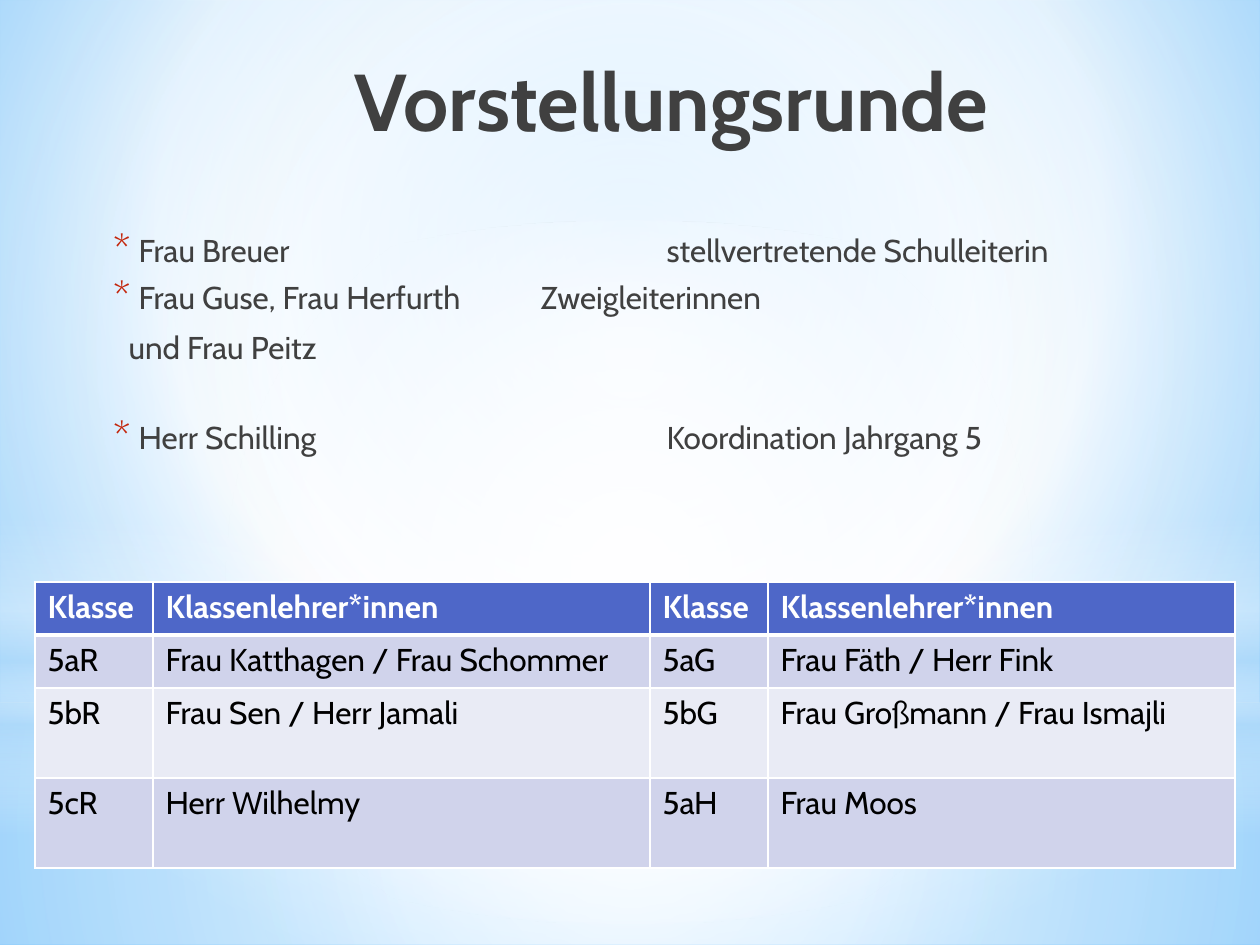
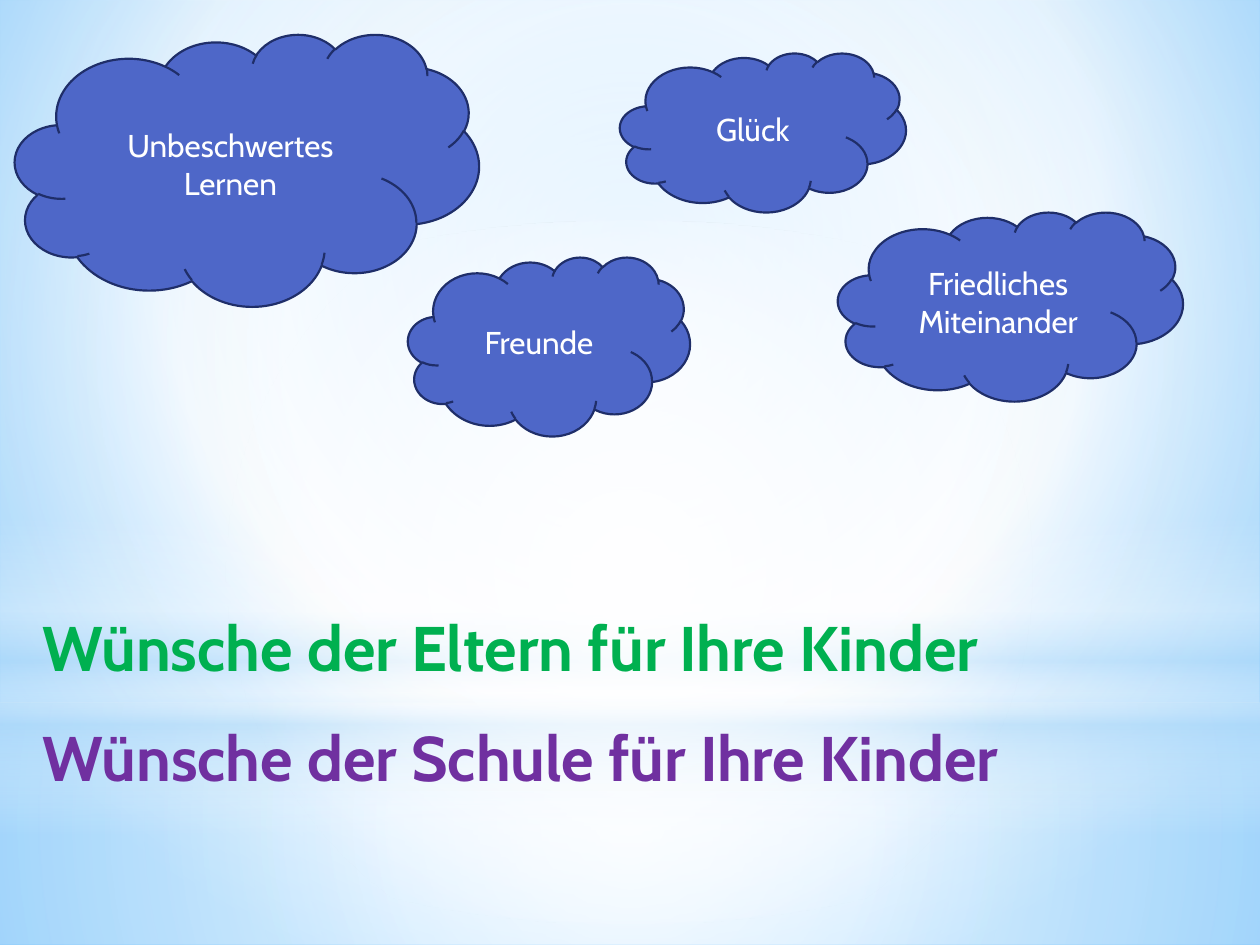
import pptx
import pptx.dml.color
import pptx.enum.shapes
import pptx.enum.text
import pptx.oxml
import pptx.oxml.ns
import pptx.util

RGB = pptx.dml.color.RGBColor
Pt = pptx.util.Pt
SHAPE = pptx.enum.shapes.MSO_SHAPE
ALIGN = pptx.enum.text.PP_ALIGN
ANCHOR = pptx.enum.text.MSO_ANCHOR

WHITE = RGB(0xFF, 0xFF, 0xFF)
BLACK = RGB(0x00, 0x00, 0x00)
GREY = RGB(0x40, 0x40, 0x40)
RED = RGB(0xC3, 0x26, 0x0C)
BLUE = RGB(0x4E, 0x67, 0xC8)
NAVY = RGB(0x1F, 0x2E, 0x69)
GREEN = RGB(0x00, 0xB0, 0x50)
PURPLE = RGB(0x70, 0x30, 0xA0)
BAND_DARK = RGB(0xD0, 0xD3, 0xEB)
BAND_LIGHT = RGB(0xE9, 0xEB, 0xF5)
SKY = RGB(0x9E, 0xD5, 0xFF)
DEEP_SKY = RGB(0x5B, 0xB9, 0xFF)
HAZE = RGB(0xB4, 0xDC, 0xFA)

FONT = "Cabin"
CENTRE = (50, 50, 50, 50)


def px(length):
    return round(length * 914400 / 126)


def xml(markup):
    """Parse one DrawingML element written without its namespace."""
    tag, rest = markup[1:].split(" ", 1)
    return pptx.oxml.parse_xml(f"<{tag} {pptx.oxml.ns.nsdecls('a')} {rest}")


def gradient(stops, focus=None):
    """Circular gradient around focus, or a vertical one without it."""
    marks = "".join(
        f'<a:gs pos="{place * 1000}"><a:srgbClr val="{colour}">'
        f'<a:alpha val="{opacity * 1000}"/></a:srgbClr></a:gs>'
        for place, colour, opacity in stops)
    if focus:
        sides = " ".join(f'{side}="{share * 1000}"' for side, share in zip("ltrb", focus))
        course = f'<a:path path="circle"><a:fillToRect {sides}/></a:path>'
    else:
        course = '<a:lin ang="5400000" scaled="0"/>'
    return xml(f'<a:gradFill rotWithShape="1"><a:gsLst>{marks}</a:gsLst>{course}</a:gradFill>')


class Slides:
    def __init__(self):
        self.deck = pptx.Presentation()
        self.deck.slide_width, self.deck.slide_height = px(1260), px(945)
        self.page = None

    def add_page(self, layout):
        self.page = self.deck.slides.add_slide(self.deck.slide_layouts[layout])

    def place(self, shape, area):
        shape.left, shape.top, shape.width, shape.height = map(px, area)

    def style(self, para, size, colour, bold=False, align=ALIGN.LEFT):
        para.alignment = align
        font = para.font
        font.name, font.size, font.bold = FONT, Pt(size), bold
        font.color.rgb = colour

    def put_gradient(self, holder, fill):
        """Swap the solid fill of holder for a gradient."""
        solid = holder.find(pptx.oxml.ns.qn("a:solidFill"))
        holder.replace(solid, fill)

    def backdrop(self, stops, focus, layers):
        """Give the master its background and its layers of light."""
        master = self.deck.slide_master
        master.background.fill.solid()
        self.put_gradient(master.element.xpath("p:cSld/p:bg/p:bgPr")[0], gradient(stops, focus))
        for index, (kind, area, layer_stops, layer_focus) in enumerate(layers):
            layer = self.page.shapes.add_shape(kind, *map(px, area))
            layer.shadow.inherit = False
            layer.line.fill.background()
            layer.fill.solid()
            self.put_gradient(layer.element.spPr, gradient(layer_stops, layer_focus))
            layer.element.xpath("p:nvSpPr/p:cNvPr")[0].set("id", str(20 + index))
            master.shapes.element.insert(2 + index, layer.element)

    def heading(self, box, text, area, size, colour, align=ALIGN.LEFT):
        self.place(box, area)
        frame = box.text_frame
        frame.word_wrap = True
        frame.auto_size = pptx.enum.text.MSO_AUTO_SIZE.NONE
        frame.vertical_anchor = ANCHOR.TOP
        frame.text = text
        self.style(frame.paragraphs[0], size, colour, True, align)

    def title(self, *details):
        self.heading(self.page.shapes.title, *details)

    def text_line(self, text, area, *details):
        box = self.page.shapes.add_textbox(*map(px, area))
        self.heading(box, text, area, *details)

    def people(self, rows, area):
        """List of (text, bulleted, tab, space before, space after)."""
        box = self.page.placeholders[1]
        self.place(box, area)
        frame = box.text_frame
        frame.auto_size = pptx.enum.text.MSO_AUTO_SIZE.NONE
        frame.vertical_anchor = ANCHOR.TOP
        frame.text = "\n".join(row[0] for row in rows)
        for para, (_, bulleted, tab, before, after) in zip(frame.paragraphs, rows):
            props = para._p.get_or_add_pPr()
            props.set("marL", str(px(32 if bulleted else 22)))
            props.set("indent", str(px(-25 if bulleted else 0)))
            para.space_before, para.space_after = Pt(before), Pt(after)
            if bulleted:
                props.append(xml(f'<a:buClr ><a:srgbClr val="{RED}"/></a:buClr>'))
                props.append(xml('<a:buSzPct val="130000"/>'))
                props.append(xml(f'<a:buFont typeface="{FONT}"/>'))
                props.append(xml('<a:buChar char="*"/>'))
            else:
                props.append(xml("<a:buNone />"))
            if tab:
                props.append(xml(f'<a:tabLst ><a:tab pos="{px(tab)}" algn="l"/></a:tabLst>'))
            self.style(para, 18, GREY)

    def table(self, rows, left, top, widths, heights):
        grid = self.page.shapes.add_table(
            len(rows), len(widths), px(left), px(top), px(sum(widths)), px(sum(heights))).table
        grid.horz_banding = False
        for column, width in zip(grid.columns, widths):
            column.width = px(width)
        for index, (row, height) in enumerate(zip(rows, heights)):
            grid.rows[index].height = px(height)
            header = index == 0
            for cell, text in zip(grid.rows[index].cells, row):
                cell.text = text
                self.style(cell.text_frame.paragraphs[0], 18, WHITE if header else BLACK, header)
                cell.fill.solid()
                cell.fill.fore_color.rgb = (
                    BLUE if header else BAND_DARK if index % 2 else BAND_LIGHT)
                self.cell_borders(cell, 3 if index == 1 else 1, 3 if header else 1)

    def cell_borders(self, cell, top, bottom):
        props = cell._tc.get_or_add_tcPr()
        for index, (side, width) in enumerate(zip("LRTB", (1, 1, top, bottom))):
            props.insert(index, xml(
                f'<a:ln{side} w="{Pt(width)}"><a:solidFill><a:srgbClr val="{WHITE}"/>'
                f"</a:solidFill></a:ln{side}>"))

    def cloud(self, text, area):
        shape = self.page.shapes.add_shape(SHAPE.CLOUD, *map(px, area))
        shape.shadow.inherit = False
        shape.fill.solid()
        shape.fill.fore_color.rgb = BLUE
        shape.line.color.rgb = NAVY
        shape.line.width = Pt(1.25)
        frame = shape.text_frame
        frame.word_wrap = True
        frame.vertical_anchor = ANCHOR.MIDDLE
        frame.text = text
        self.style(frame.paragraphs[0], 18, WHITE, align=ALIGN.CENTER)


def main():
    slides = Slides()

    # Introductions, with the backdrop that both pages share
    slides.add_page(1)
    slides.backdrop(
        [(0, SKY, 100), (60, WHITE, 100), (100, DEEP_SKY, 100)], (20, 10, 20, 60),
        [
            (SHAPE.RECTANGLE, (0, 703, 1260, 242),
             [(0, WHITE, 91), (37, WHITE, 76), (100, HAZE, 79)], CENTRE),
            (SHAPE.RECTANGLE, (0, 0, 1260, 703),
             [(0, WHITE, 89), (48, WHITE, 62), (100, HAZE, 79)], CENTRE),
            (SHAPE.RECTANGLE, (0, 519, 1260, 315),
             [(0, WHITE, 0), (29, WHITE, 30), (45, HAZE, 40),
              (55, WHITE, 26), (65, HAZE, 60), (100, WHITE, 0)], None),
            (SHAPE.OVAL, (0, 221, 1260, 703),
             [(0, WHITE, 100), (56, WHITE, 0)], CENTRE),
        ])
    slides.title("Vorstellungsrunde", (223, 45, 897, 158), 46, GREY, ALIGN.CENTER)
    slides.people([
        ("Frau Breuer\tstellvertretende Schulleiterin", True, 560, 0, 1),
        ("Frau Guse, Frau Herfurth\tZweigleiterinnen", True, 434, 4, 3),
        ("und Frau Peitz", False, None, 4, 3),
        ("Herr Schilling\tKoordination Jahrgang 5", True, 560, 27, 3),
    ], (94, 225, 1042, 307))
    slides.table([
        ("Klasse", "Klassenlehrer*innen") * 2,
        ("5aR", "Frau Katthagen / Frau Schommer", "5aG", "Frau Fäth / Herr Fink"),
        ("5bR", "Frau Sen / Herr Jamali", "5bG", "Frau Großmann / Frau Ismajli"),
        ("5cR", "Herr Wilhelmy", "5aH", "Frau Moos"),
    ], 35, 582, (118, 497, 118, 467), (53, 53, 90, 90))

    # Wishes for the children
    slides.add_page(5)
    slides.title("Wünsche der Schule für Ihre Kinder", (30, 712, 1210, 158), 36, PURPLE)
    for text, area in (
        ("Unbeschwertes Lernen", (15, 34, 464, 272)),
        ("Glück", (620, 53, 286, 159)),
        ("Friedliches Miteinander", (838, 212, 345, 189)),
        ("Freunde", (408, 257, 282, 179)),
    ):
        slides.cloud(text, area)
    slides.text_line("Wünsche der Eltern für Ihre Kinder", (30, 602, 1116, 158), 36, GREEN)

    slides.deck.save("out.pptx")


if __name__ == "__main__":
    main()
